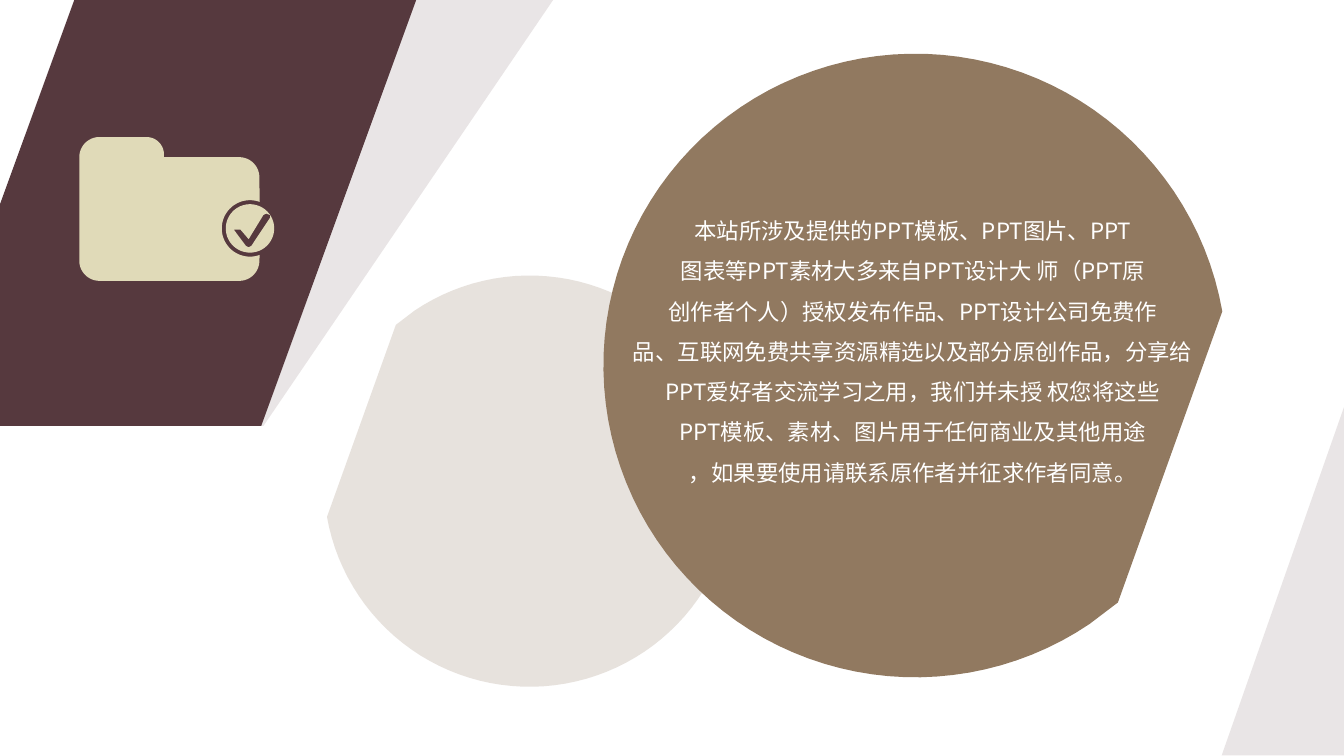
from dataclasses import dataclass
from math import cos, radians, sin

from lxml.etree import SubElement
from pptx import Presentation
from pptx.dml.color import RGBColor
from pptx.enum.shapes import MSO_SHAPE
from pptx.enum.text import MSO_ANCHOR, PP_ALIGN
from pptx.oxml.ns import qn
from pptx.shapes.autoshape import Shape
from pptx.slide import Slide
from pptx.util import Inches, Pt

Point = tuple[float, float]


@dataclass(frozen=True)
class Theme:
    plum: str = "56393E"
    brown: str = "917960"
    cream: str = "E0DAB8"
    white: str = "FFFFFF"
    font: str = "Noto Sans CJK SC"
    body_size: int = 12
    line_spacing: float = 1.5


@dataclass(frozen=True)
class Band:
    left: float
    top: float
    width: float
    height: float
    slant: float
    opacity: int


@dataclass(frozen=True)
class Disc:
    x: float
    y: float
    radius: float
    turn: int
    opacity: int


THEME = Theme()
BANDS = [
    Band(-0.6, -1.3, 4.17, 4.47, 0.39, 100),
    Band(9.09, 0, 4.29, 5.62, 0.46, 13),
    Band(0.1, -1.3, 4.9, 4.47, 0.68, 13),
]
SMALL_DISC = Disc(3.94, 3.58, 1.53, 180, 21)
LARGE_DISC = Disc(6.81, 2.72, 2.32, 0, 100)
STATEMENT = [
    "本站所涉及提供的PPT模板、PPT图片、PPT",
    "图表等PPT素材大多来自PPT设计大 师（PPT原",
    "创作者个人）授权发布作品、PPT设计公司免费作",
    "品、互联网免费共享资源精选以及部分原创作品，分享给PPT爱好者交流学习之用，我们并未授 权您将这些",
    "PPT模板、素材、图片用于任何商业及其他用途",
    "，如果要使用请联系原作者并征求作者同意。",
]


def paint(shape: Shape, color: str, opacity: int = 100) -> None:
    shape.shadow.inherit = False
    shape.line.fill.background()
    shape.fill.solid()
    shape.fill.fore_color.rgb = RGBColor.from_string(color)
    if opacity < 100:
        tint = shape.fill._xPr.find(qn("a:solidFill"))[0]
        SubElement(tint, qn("a:alpha"), val=str(opacity * 1000))


def arc(x: float, y: float, radius: float, start: float, end: float) -> list[Point]:
    steps = max(8, int(abs(end - start) / 3))
    angles = [radians(start + (end - start) * step / steps) for step in range(steps + 1)]
    return [(x + radius * cos(angle), y + radius * sin(angle)) for angle in angles]


def draw_outline(page: Slide, contours: list[list[Point]], color: str, opacity: int = 100) -> Shape:
    first, *others = [[(Inches(x), Inches(y)) for x, y in contour] for contour in contours]
    builder = page.shapes.build_freeform(*first[0])
    builder.add_line_segments(first[1:], close=True)
    for contour in others:
        builder.move_to(*contour[0])
        builder.add_line_segments(contour[1:], close=True)
    shape = builder.convert_to_shape()
    paint(shape, color, opacity)
    return shape


def draw_band(page: Slide, band: Band) -> None:
    shape = page.shapes.add_shape(
        MSO_SHAPE.PARALLELOGRAM,
        Inches(band.left), Inches(band.top), Inches(band.width), Inches(band.height),
    )
    shape.adjustments[0] = band.slant
    paint(shape, THEME.plum, band.opacity)


def draw_disc(page: Slide, disc: Disc) -> Shape:
    rim = arc(disc.x, disc.y, disc.radius, 56 + disc.turn, 350 + disc.turn)
    side = cos(radians(disc.turn)) * disc.radius
    corner = (disc.x + 0.65 * side, disc.y + 0.76 * side)
    return draw_outline(page, [rim + [corner]], THEME.brown, disc.opacity)


def draw_folder(page: Slide) -> None:
    folder = [
        *arc(0.74, 1.17, 0.15, 180, 270),
        *arc(1.09, 1.15, 0.13, 270, 360),
        (1.22, 1.17),
        *arc(1.78, 1.32, 0.15, 270, 360),
        *arc(1.86, 1.7, 0.21, -70, -290),
        *arc(1.78, 1.94, 0.15, 0, 90),
        *arc(0.74, 1.94, 0.15, 90, 180),
    ]
    badge = arc(1.86, 1.7, 0.18, 0, 360)
    check = [
        (1.93, 1.74), (1.87, 1.83), (1.85, 1.84), (1.83, 1.83), (1.74, 1.71), (1.79, 1.71),
        (1.85, 1.78), (1.96, 1.6), (1.98, 1.59), (2.01, 1.6), (2.01, 1.62),
    ]
    draw_outline(page, [folder, badge, check], THEME.cream)


def write_statement(box: Shape, lines: list[str]) -> None:
    frame = box.text_frame
    frame_format = {
        "word_wrap": True,
        "vertical_anchor": MSO_ANCHOR.MIDDLE,
        "margin_left": Inches(0.1),
        "margin_right": Inches(0.1),
        "margin_top": Inches(0.05),
        "margin_bottom": Inches(0.36),
    }
    para_format = {"alignment": PP_ALIGN.CENTER, "line_spacing": THEME.line_spacing}
    span_format = {"name": THEME.font, "size": Pt(THEME.body_size)}
    for name, value in frame_format.items():
        setattr(frame, name, value)
    for index, line in enumerate(lines):
        para = frame.add_paragraph() if index else frame.paragraphs[0]
        for name, value in para_format.items():
            setattr(para, name, value)
        span = para.add_run()
        span.text = line
        for name, value in span_format.items():
            setattr(span.font, name, value)
        span.font.color.rgb = RGBColor.from_string(THEME.white)
        SubElement(span.font._element, qn("a:ea"), typeface=THEME.font)


def main() -> None:
    deck = Presentation()
    deck.slide_width = Inches(10)
    deck.slide_height = Inches(10 * 9 / 16)
    page = deck.slides.add_slide(deck.slide_layouts[6])
    backdrop = page.shapes.add_shape(MSO_SHAPE.RECTANGLE, 0, 0, deck.slide_width, deck.slide_height)
    paint(backdrop, THEME.white, 61)
    for band in BANDS:
        draw_band(page, band)
    draw_folder(page)
    draw_disc(page, SMALL_DISC)
    write_statement(draw_disc(page, LARGE_DISC), STATEMENT)
    deck.save("out.pptx")


if __name__ == "__main__":
    main()
